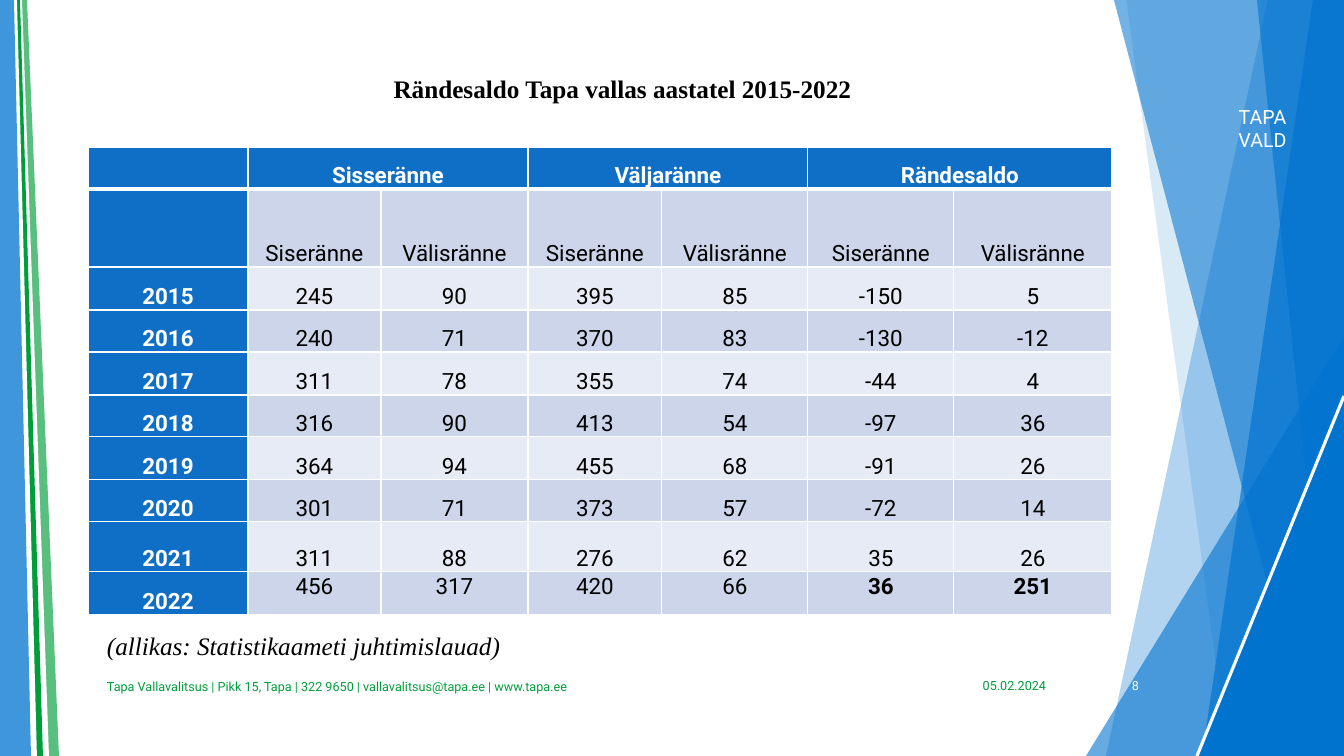
from dataclasses import dataclass

from lxml import etree
from pptx import Presentation, util as u
from pptx.dml.color import RGBColor
from pptx.enum import shapes, text
from pptx.oxml.ns import qn

PX = 914400 / 100.8
BLUE, GREEN, WHITE, BLACK = "0073CF", "009E3B", "FFFFFF", "000000"
HEAD, DARK_BAND, LIGHT_BAND = "0F6FC6", "CCD5EA", "E7EBF5"
CENTER, LEFT, RIGHT = text.PP_ALIGN.CENTER, text.PP_ALIGN.LEFT, text.PP_ALIGN.RIGHT
TOP, MIDDLE, BOTTOM = (text.MSO_ANCHOR.TOP, text.MSO_ANCHOR.MIDDLE,
                       text.MSO_ANCHOR.BOTTOM)


@dataclass
class Polygon:
    points: list[tuple[int, int]]
    color: str
    alpha: int = 100


@dataclass
class Triangle:
    box: tuple[int, int, int, int]
    color: str
    alpha: int = 100


@dataclass
class Label:
    content: str
    box: tuple[int, int, int, int]
    size: int
    color: str
    align: text.PP_ALIGN = LEFT
    anchor: text.MSO_ANCHOR = MIDDLE
    font: str = "Roboto"
    bold: bool = False
    italic: bool = False
    inset: int = 10


FACETS = [
    Polygon([(1268, -1), (1344, -1), (1344, 756), (1106, 756)], BLUE, 30),
    Polygon([(1126, -3), (1344, -3), (1344, 754), (1228, 754)], BLUE, 15),
    Triangle((1086, 336, 258, 420), BLUE, 60),
    Polygon([(1114, 0), (1344, 0), (1344, 757), (1313, 757)], BLUE, 55),
    Polygon([(1313, 0), (1344, 0), (1344, 757), (1202, 757)], BLUE, 65),
    Polygon([(1257, 0), (1344, 0), (1344, 757), (1335, 757)], BLUE, 60),
    Triangle((1197, 396, 147, 360), BLUE),
]
LEFT_BANDS = [
    Polygon([(0, 757), (0, 0), (top, 0), (bottom, 757)], color, alpha)
    for top, bottom, color, alpha in [
        (27, 59, GREEN, 65), (22, 49, WHITE, 100), (20, 43, GREEN, 100),
        (17, 37, WHITE, 100), (14, 31, BLUE, 75)]
]
LABELS = [
    Label("TAPA VALD", (1203, 111, 119, 34), 14, WHITE, CENTER, inset=12),
    Label("Rändesaldo Tapa vallas aastatel 2015-2022", (97, 68, 1051, 46), 18, BLACK,
          CENTER, TOP, "Times New Roman", bold=True),
    Label("05.02.2024", (956, 666, 100, 40), 9, GREEN, RIGHT),
    Label("Tapa Vallavalitsus | Pikk 15, Tapa | 322 9650 | vallavalitsus@tapa.ee"
          " | www.tapa.ee", (97, 667, 841, 40), 9, GREEN),
    Label("8", (1074, 666, 75, 40), 9, WHITE, RIGHT),
    Label("(allikas: Statistikaameti juhtimislauad)", (97, 625, 673, 40), 18, BLACK,
          anchor=TOP, font="Times New Roman", italic=True),
]

COLUMN_WIDTHS = [160, 133, 147, 134, 146, 146, 158]
ROW_HEIGHTS = [42, 78, 43, 42, 43, 42, 43, 42, 50, 43]
ROWS = [
    ["", "Sisseränne", "", "Väljaränne", "", "Rändesaldo", ""],
    [""] + ["Siseränne", "Välisränne"] * 3,
    ["2015", "245", "90", "395", "85", "-150", "5"],
    ["2016", "240", "71", "370", "83", "-130", "-12"],
    ["2017", "311", "78", "355", "74", "-44", "4"],
    ["2018", "316", "90", "413", "54", "-97", "36"],
    ["2019", "364", "94", "455", "68", "-91", "26"],
    ["2020", "301", "71", "373", "57", "-72", "14"],
    ["2021", "311", "88", "276", "62", "35", "26"],
    ["2022", "456", "317", "420", "66", "36", "251"],
]


def px(n: int) -> u.Emu:
    return u.Emu(round(n * PX))


def rgb(color: str) -> RGBColor:
    return RGBColor.from_string(color)


def write(tf, content: str, *, size: int, color: str, align=LEFT, font="Roboto",
          bold=False, italic=False, spacing: float = 1.0) -> None:
    p = tf.paragraphs[0]
    p.alignment, p.line_spacing = align, spacing
    r = p.add_run()
    r.text = content
    r.font.name, r.font.size = font, u.Pt(size)
    r.font.bold, r.font.italic = bold, italic
    r.font.color.rgb = rgb(color)


def add_facet(s, facet: Polygon | Triangle) -> None:
    if isinstance(facet, Triangle):
        sp = s.shapes.add_shape(shapes.MSO_SHAPE.ISOSCELES_TRIANGLE, *map(px, facet.box))
        sp.adjustments[0] = 1
    else:
        builder = s.shapes.build_freeform(*facet.points[0], scale=PX)
        builder.add_line_segments(facet.points[1:], close=True)
        sp = builder.convert_to_shape()
    sp.shadow.inherit = False
    sp.line.fill.background()
    sp.fill.solid()
    sp.fill.fore_color.rgb = rgb(facet.color)
    if facet.alpha < 100:
        clr = sp.fill._xPr.find(qn("a:solidFill"))[0]
        etree.SubElement(clr, qn("a:alpha"), val=str(facet.alpha * 1000))


def add_edge(s) -> None:
    line = s.shapes.add_connector(shapes.MSO_CONNECTOR.STRAIGHT,
                                  px(1344), px(396), px(1197), px(756))
    line.line.color.rgb = rgb(WHITE)
    line.line.width = u.Pt(2.25)
    etree.SubElement(line._element.spPr, qn("a:effectLst"))


def add_label(s, label: Label) -> None:
    tf = s.shapes.add_textbox(*map(px, label.box)).text_frame
    tf.word_wrap = True
    tf.vertical_anchor = label.anchor
    tf.margin_left = tf.margin_right = px(label.inset)
    write(tf, label.content, size=label.size, color=label.color, align=label.align,
          font=label.font, bold=label.bold, italic=label.italic)


def add_borders(cell, top: int, bottom: int) -> None:
    """Draw white borders; top and bottom are widths in points."""
    tc_pr = cell._tc.get_or_add_tcPr()
    for side, width in [("L", 1), ("R", 1), ("T", top), ("B", bottom)]:
        ln = etree.SubElement(tc_pr, qn(f"a:ln{side}"), w=str(u.Pt(width)))
        fill = etree.SubElement(ln, qn("a:solidFill"))
        etree.SubElement(fill, qn("a:srgbClr"), val=WHITE)


def add_migration_table(s) -> None:
    table = s.shapes.add_table(len(ROWS), len(COLUMN_WIDTHS), px(88), px(147),
                               px(sum(COLUMN_WIDTHS)), px(sum(ROW_HEIGHTS))).table
    for column, width in zip(table.columns, COLUMN_WIDTHS):
        column.width = px(width)
    for row, height in zip(table.rows, ROW_HEIGHTS):
        row.height = px(height)
    last = len(ROWS) - 1
    for i, values in enumerate(ROWS):
        for j, value in enumerate(values):
            cell = table.cell(i, j)
            header = i == 0 or j == 0
            add_borders(cell, 3 if i == 1 else 1, 3 if i == 0 else 1)
            cell.fill.solid()
            cell.fill.fore_color.rgb = rgb(
                HEAD if header else DARK_BAND if i % 2 else LIGHT_BAND)
            cell.margin_left = cell.margin_right = px(5)
            cell.margin_top = cell.margin_bottom = 0
            cell.vertical_anchor = TOP if i == last and j else BOTTOM
            if value:
                write(cell.text_frame, value, size=16, align=CENTER, spacing=1.07,
                      color=WHITE if header else BLACK,
                      bold=header or (i == last and j >= 5))
    for j in (1, 3, 5):
        table.cell(0, j).merge(table.cell(0, j + 1))


def main() -> None:
    prs = Presentation()
    prs.slide_width, prs.slide_height = px(1344), px(756)
    s = prs.slides.add_slide(prs.slide_layouts[6])
    for facet in FACETS:
        add_facet(s, facet)
    add_edge(s)
    for band in LEFT_BANDS:
        add_facet(s, band)
    add_migration_table(s)
    for label in LABELS:
        add_label(s, label)
    prs.save("out.pptx")


if __name__ == "__main__":
    main()
